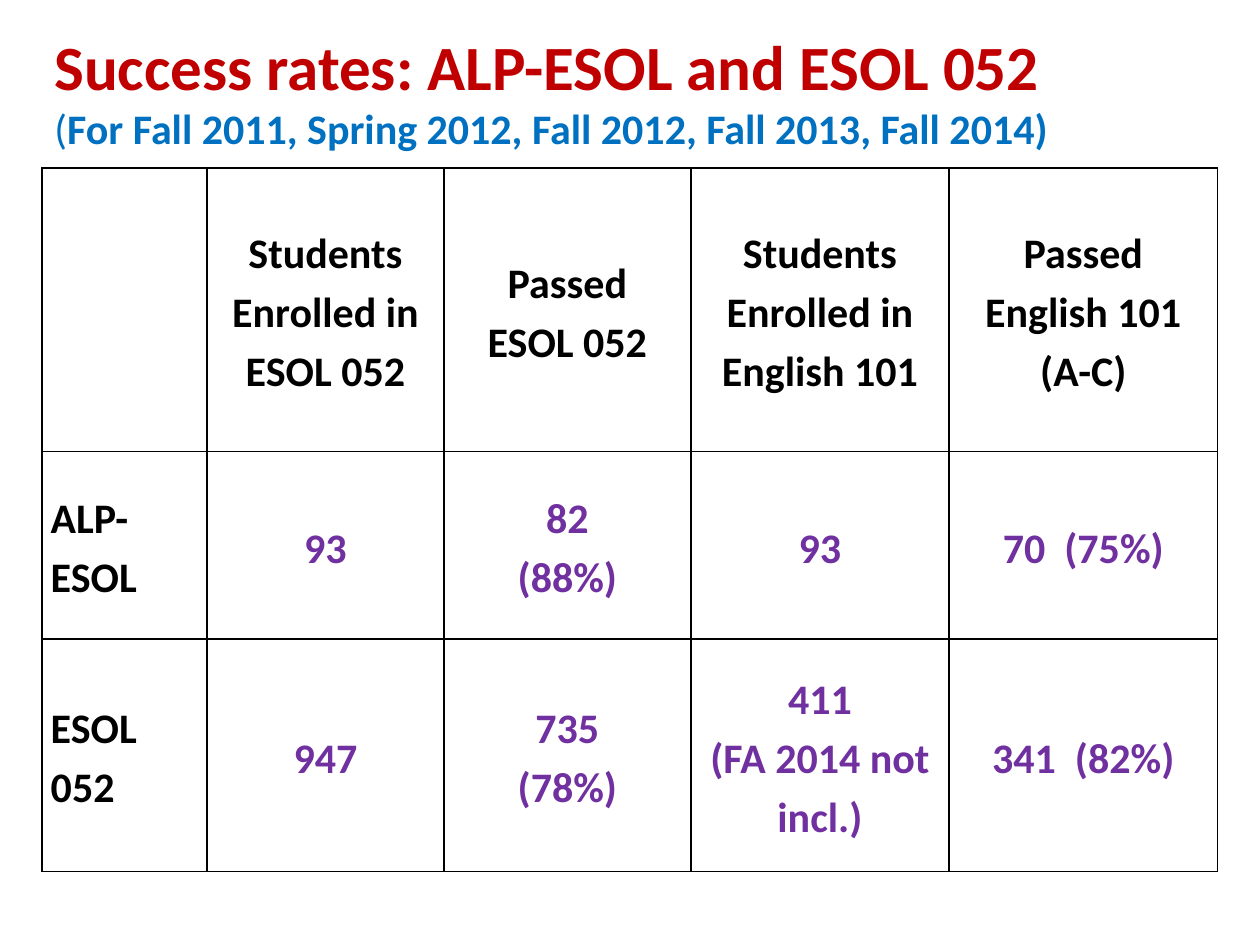
from dataclasses import dataclass

from lxml import etree
from pptx import Presentation
from pptx.dml.color import RGBColor
from pptx.enum.text import MSO_ANCHOR, PP_ALIGN
from pptx.oxml.ns import qn
from pptx.slide import Slide
from pptx.table import _Cell
from pptx.util import Pt

MIDDLE = MSO_ANCHOR.MIDDLE
LEFT, CENTER = PP_ALIGN.LEFT, PP_ALIGN.CENTER

FONT = "Calibri"
COLORS = {
    "title": "C00000",
    "terms": "0070C0",
    "label": "000000",
    "result": "7030A0",
    "border": "000000",
}
COLUMN_WIDTHS = (94.3, 135.4, 141.1, 147.6, 153.4)
ROW_HEIGHTS = (162, 107.2, 132.8)
BORDER_WIDTH = 1


@dataclass(frozen=True)
class TitleSpan:
    text: str
    size: float
    color: str
    bold: bool = True


@dataclass(frozen=True)
class Entry:
    """Text of one table cell, one string per paragraph."""
    lines: tuple[str, ...]
    color: str = "label"
    align: PP_ALIGN = CENTER


def header(*lines: str) -> Entry:
    return Entry(lines)


def label(text: str) -> Entry:
    return Entry((text,), align=LEFT)


def result(*lines: str) -> Entry:
    return Entry(lines, "result")


TITLE_LINES = (
    (TitleSpan("Success rates: ALP-ESOL and ESOL 052", 36, "title"),),
    (
        TitleSpan("(", 24, "terms", bold=False),
        TitleSpan("For Fall 2011, Spring 2012, Fall 2012, Fall 2013, Fall 2014)", 24, "terms"),
    ),
)
ROWS = (
    (
        header(),
        header("Students", "Enrolled in ESOL 052"),
        header("Passed", "ESOL 052"),
        header("Students Enrolled in English 101"),
        header("Passed English 101", "(A-C)"),
    ),
    (
        label("ALP-ESOL"),
        result("93"),
        result("82", "(88%)"),
        result("93"),
        result("70  (75%)"),
    ),
    (
        label("ESOL 052"),
        result("947"),
        result("735", "(78%)"),
        result("411", "(FA 2014 not incl.)"),
        result("341  (82%)"),
    ),
)


def rgb(name: str) -> RGBColor:
    return RGBColor.from_string(COLORS[name])


def add_title(page: Slide) -> None:
    box = page.shapes.add_textbox(Pt(24), Pt(30), Pt(656.6), Pt(72))
    frame = box.text_frame
    frame.word_wrap = True
    frame.vertical_anchor = MIDDLE
    frame.margin_top, frame.margin_bottom = Pt(0), Pt(29)
    para = frame.paragraphs[0]
    para.font.name = FONT
    for index, line in enumerate(TITLE_LINES):
        if index:
            para.add_line_break()
        for item in line:
            span = para.add_run()
            span.text = item.text
            span.font.size = Pt(item.size)
            span.font.bold = item.bold
            span.font.color.rgb = rgb(item.color)


def add_borders(cell: _Cell) -> None:
    """Put a solid line on all four sides, ahead of the fill as the schema asks."""
    properties = cell._tc.get_or_add_tcPr()
    for position, side in enumerate(("a:lnL", "a:lnR", "a:lnT", "a:lnB")):
        line = etree.Element(qn(side), w=str(Pt(BORDER_WIDTH)))
        fill = etree.SubElement(line, qn("a:solidFill"))
        etree.SubElement(fill, qn("a:srgbClr"), val=COLORS["border"])
        properties.insert(position, line)


def fill_cell(cell: _Cell, entry: Entry) -> None:
    cell.fill.background()
    add_borders(cell)
    cell.vertical_anchor = MIDDLE
    cell.margin_left = cell.margin_right = Pt(5)
    cell.margin_top = cell.margin_bottom = Pt(0)
    cell.text = "\n".join(entry.lines)
    for para in cell.text_frame.paragraphs:
        para.alignment = entry.align
        para.line_spacing = 1.15
        para.font.name = FONT
        para.font.size = Pt(24)
        para.font.bold = True
        para.font.color.rgb = rgb(entry.color)


def add_results_table(page: Slide) -> None:
    frame = page.shapes.add_table(
        len(ROW_HEIGHTS), len(COLUMN_WIDTHS),
        Pt(24), Pt(96), Pt(sum(COLUMN_WIDTHS)), Pt(sum(ROW_HEIGHTS)),
    )
    table = frame.table
    table.first_row = table.horz_banding = False
    for column, width in zip(table.columns, COLUMN_WIDTHS):
        column.width = Pt(width)
    for row, height, entries in zip(table.rows, ROW_HEIGHTS, ROWS):
        row.height = Pt(height)
        for cell, entry in zip(row.cells, entries):
            fill_cell(cell, entry)


def main() -> None:
    deck = Presentation()
    deck.slide_width, deck.slide_height = Pt(720), Pt(540)
    page = deck.slides.add_slide(deck.slide_layouts[6])
    add_title(page)
    add_results_table(page)
    deck.save("out.pptx")


if __name__ == "__main__":
    main()
